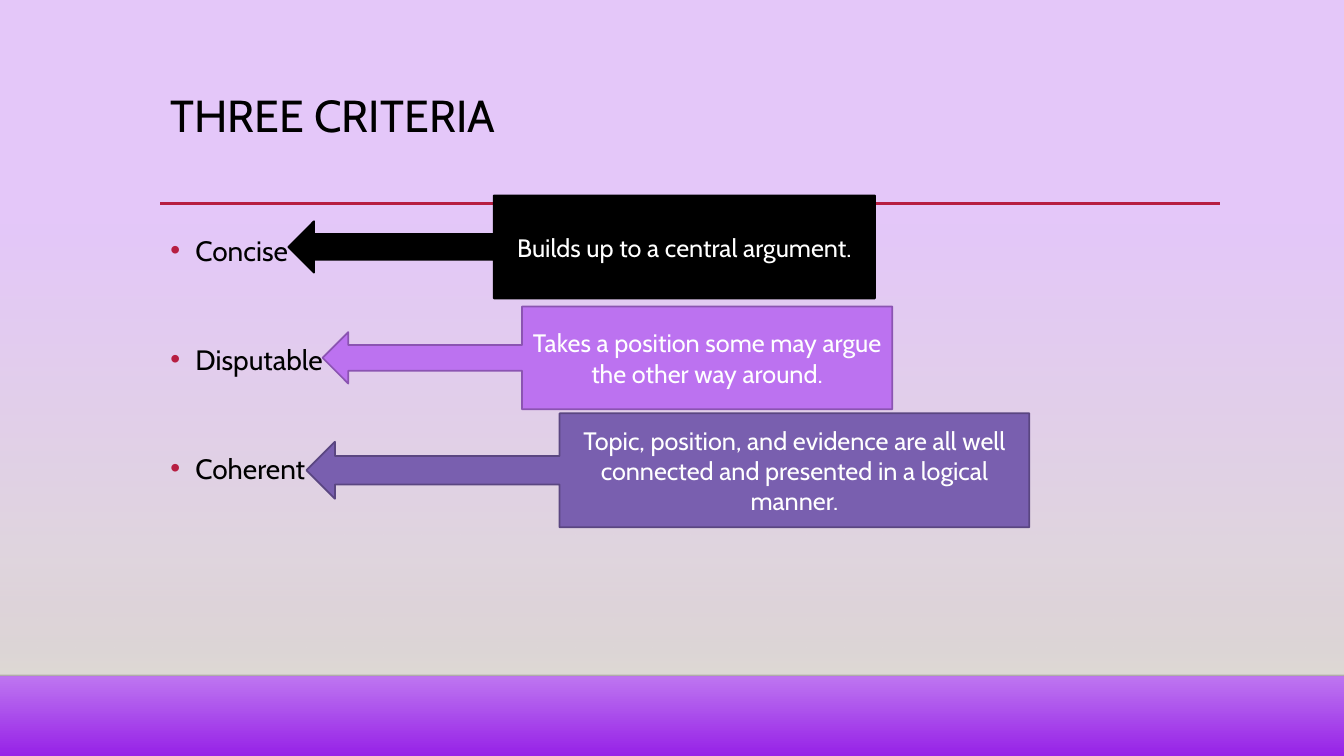
from dataclasses import dataclass

from lxml import etree
from pptx import Presentation, util as u
from pptx.dml.color import RGBColor
from pptx.enum import shapes, text
from pptx.oxml import ns

BLACK = RGBColor(0x00, 0x00, 0x00)
WHITE = RGBColor(0xFF, 0xFF, 0xFF)
CRIMSON = RGBColor(0xB7, 0x1E, 0x42)
LILAC = RGBColor(0xE4, 0xC7, 0xF9)
MAUVE = RGBColor(0xD7, 0xAA, 0xF6)
VIOLET = RGBColor(0x96, 0x22, 0xE7)
STONE = RGBColor(0xDF, 0xDB, 0xD5)
ORCHID = RGBColor(0xBC, 0x72, 0xF0)
ORCHID_EDGE = RGBColor(0x8B, 0x54, 0xB2)
INDIGO = RGBColor(0x79, 0x5F, 0xAF)
INDIGO_EDGE = RGBColor(0x5A, 0x46, 0x81)

WIDTH, HEIGHT = u.Inches(13.33), u.Inches(7.5)
LEFT, RIGHT, FLOOR = 11.93, 90.75, 89.33
FONT = "Cabin"


@dataclass(frozen=True)
class Area:
    """Percentages of the slide's width and height."""
    x: float
    y: float
    w: float
    h: float

    def box(self) -> tuple[int, int, int, int]:
        return (across(self.x), down(self.y), across(self.w), down(self.h))


@dataclass(frozen=True)
class Stop:
    position: int
    color: RGBColor
    alpha: int = 100


@dataclass(frozen=True)
class Rule:
    x1: float
    x2: float
    y: float
    color: RGBColor
    points: float
    alpha: int = 100


@dataclass(frozen=True)
class Criterion:
    name: str
    meaning: str
    area: Area
    fill: RGBColor
    edge: RGBColor


SKY = (Stop(0, LILAC), Stop(74, LILAC), Stop(83, MAUVE), Stop(100, VIOLET))
HAZE = (Stop(0, STONE, 0), Stop(100, STONE))
HAZE_AREA = Area(0, 29.47, 100, 59.87)
TITLE_AREA = Area(LEFT, 11.73, 78.75, 15.33)
LIST_AREA = Area(LEFT, 29.33, 78.75, 50.27)
RULES = (
    Rule(0, 100, FLOOR, BLACK, 1, 20),
    Rule(LEFT, RIGHT, 26.93, CRIMSON, 2.5),
)
CRITERIA = (
    Criterion("Concise", "Builds up to a central argument.",
              Area(21.45, 25.87, 43.65, 13.6), BLACK, BLACK),
    Criterion("Disputable", "Takes a position some may argue the other way around.",
              Area(24, 40.53, 42.38, 13.6), ORCHID, ORCHID_EDGE),
    Criterion("Coherent",
              "Topic, position, and evidence are all well connected "
              "and presented in a logical manner.",
              Area(22.8, 54.67, 53.78, 15.07), INDIGO, INDIGO_EDGE),
)


def across(share: float) -> int:
    return round(WIDTH * share / 100)


def down(share: float) -> int:
    return round(HEIGHT * share / 100)


def add(parent, tag: str, **attrs: str):
    return etree.SubElement(parent, ns.qn(tag), attrs)


def set_alpha(color, alpha: int) -> None:
    if alpha < 100:
        add(color, "a:alpha", val=str(alpha * 1000))


def set_gradient(fill, element, stops: tuple[Stop, ...]) -> None:
    fill.gradient()
    fill.gradient_angle = 270
    gs_list = element.xpath(".//a:gsLst")[0]
    for old in list(gs_list):
        gs_list.remove(old)
    for stop in stops:
        gs = add(gs_list, "a:gs", pos=str(stop.position * 1000))
        set_alpha(add(gs, "a:srgbClr", val=str(stop.color)), stop.alpha)


def style(p, color: RGBColor, size: int, **formats) -> None:
    for key, value in formats.items():
        setattr(p, key, value)
    for key, value in {"name": FONT, "size": u.Pt(size)}.items():
        setattr(p.font, key, value)
    p.font.color.rgb = color


def draw_haze(s) -> None:
    sp = s.shapes.add_shape(shapes.MSO_SHAPE.RECTANGLE, *HAZE_AREA.box())
    sp.shadow.inherit = False
    sp.line.fill.background()
    set_gradient(sp.fill, sp.element, HAZE)


def draw_rule(s, rule: Rule) -> None:
    y = down(rule.y)
    line = s.shapes.add_connector(
        shapes.MSO_CONNECTOR.STRAIGHT, across(rule.x1), y, across(rule.x2), y)
    line.line.color.rgb = rule.color
    line.line.width = u.Pt(rule.points)
    set_alpha(line.element.xpath(".//a:ln//a:srgbClr")[0], rule.alpha)
    add(line.element.spPr, "a:effectLst")


def add_text(s, area: Area):
    tf = s.shapes.add_textbox(*area.box()).text_frame
    tf.word_wrap = True
    return tf


def draw_title(s) -> None:
    p = add_text(s, TITLE_AREA).paragraphs[0]
    p.text = "THREE CRITERIA"
    style(p, BLACK, 32, line_spacing=0.9)


def draw_list(s) -> None:
    tf = add_text(s, LIST_AREA)
    for i, criterion in enumerate(CRITERIA):
        p = tf.add_paragraph() if i else tf.paragraphs[0]
        p.text = criterion.name
        pPr = p._p.get_or_add_pPr()
        pPr.set("marL", str(u.Inches(0.25)))
        pPr.set("indent", str(-u.Inches(0.25)))
        add(add(pPr, "a:buClr"), "a:srgbClr", val=str(CRIMSON))
        add(pPr, "a:buFont", typeface="Arial")
        add(pPr, "a:buChar", char="•")
        style(p, BLACK, 20, line_spacing=1.2, space_before=u.Pt(49 if i else 0))


def draw_callout(s, criterion: Criterion) -> None:
    sp = s.shapes.add_shape(
        shapes.MSO_SHAPE.LEFT_ARROW_CALLOUT, *criterion.area.box())
    sp.shadow.inherit = False
    sp.fill.solid()
    sp.fill.fore_color.rgb = criterion.fill
    sp.line.color.rgb = criterion.edge
    sp.line.width = u.Pt(1.25)
    tf = sp.text_frame
    for key, value in {"word_wrap": True,
                       "vertical_anchor": text.MSO_ANCHOR.MIDDLE}.items():
        setattr(tf, key, value)
    p = tf.paragraphs[0]
    p.text = criterion.meaning
    style(p, WHITE, 18, alignment=text.PP_ALIGN.CENTER)


def main() -> None:
    prs = Presentation()
    prs.slide_width, prs.slide_height = WIDTH, HEIGHT
    s = prs.slides.add_slide(prs.slide_layouts[6])
    set_gradient(s.background.fill, s.element, SKY)
    draw_haze(s)
    for rule in RULES:
        draw_rule(s, rule)
    draw_title(s)
    draw_list(s)
    for criterion in CRITERIA:
        draw_callout(s, criterion)
    prs.save("out.pptx")


if __name__ == "__main__":
    main()
